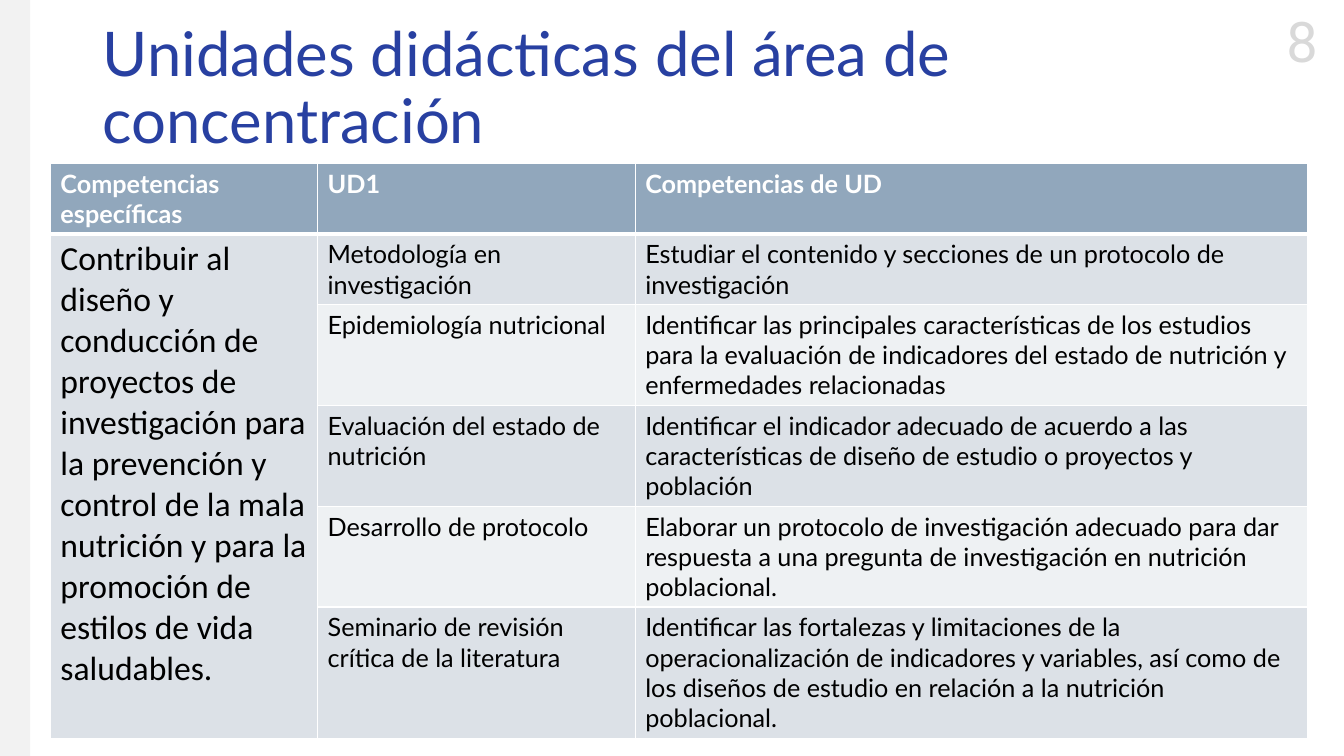
from dataclasses import dataclass

from lxml import etree
from pptx import Presentation
from pptx.dml.color import RGBColor
from pptx.enum.shapes import MSO_SHAPE
from pptx.enum.text import MSO_ANCHOR, PP_ALIGN
from pptx.oxml.ns import qn
from pptx.util import Inches, Pt

RECT = MSO_SHAPE.RECTANGLE
TOP, MIDDLE = MSO_ANCHOR.TOP, MSO_ANCHOR.MIDDLE
LEFT, CENTER = PP_ALIGN.LEFT, PP_ALIGN.CENTER


@dataclass(frozen=True)
class Theme:
    title: str = "2840A1"
    number: str = "D9D9D9"
    strip: str = "F2F2F2"
    header: str = "91A7BC"
    bands: tuple = ("DCE1E7", "EEF1F3")
    white: str = "FFFFFF"
    text: str = "000000"
    title_size: int = 44
    number_size: int = 40
    goal_size: int = 24
    cell_size: int = 18


T = Theme()

TITLE = "Unidades didácticas del área de concentración"
HEADER = ["Competencias específicas", "UD1", "Competencias de UD"]
GOAL = ("Contribuir al diseño y conducción de proyectos de investigación para "
        "la prevención y control de la mala nutrición y para la promoción de "
        "estilos de vida saludables.")
UNITS = [
    ("Metodología en investigación",
     "Estudiar el contenido y secciones de un protocolo de investigación"),
    ("Epidemiología nutricional",
     "Identificar las principales características de los estudios para la "
     "evaluación de indicadores del estado de nutrición y enfermedades "
     "relacionadas"),
    ("Evaluación del estado de nutrición",
     "Identificar el indicador adecuado de acuerdo a las características de "
     "diseño de estudio o proyectos y población"),
    ("Desarrollo de protocolo",
     "Elaborar un protocolo de investigación adecuado para dar respuesta a "
     "una pregunta de investigación en nutrición poblacional."),
    ("Seminario de revisión crítica de la literatura",
     "Identificar las fortalezas y limitaciones de la operacionalización de "
     "indicadores y variables, así como de los diseños de estudio en relación "
     "a la nutrición poblacional."),
]
COL_WIDTHS = [2.65, 3.15, 6.67]
ROW_HEIGHTS = [0.7, 0.7, 1, 1, 1, 1.3]


def rgb(color):
    return RGBColor.from_string(color)


def write(tf, text, color, align=LEFT, spacing=None, **font):
    p = tf.paragraphs[0]
    p.alignment = align
    p.line_spacing = spacing
    r = p.add_run()
    r.text = text
    r.font.color.rgb = rgb(color)
    for name, value in font.items():
        setattr(r.font, name, value)


def add_text(s, box, text, color, wrap=True, anchor=TOP, **style):
    tf = s.shapes.add_textbox(*map(Inches, box)).text_frame
    tf.word_wrap = wrap
    tf.vertical_anchor = anchor
    write(tf, text, color, **style)


def set_borders(cell, bottom):
    tcPr = cell._tc.get_or_add_tcPr()
    widths = {"a:lnL": 1, "a:lnR": 1, "a:lnT": 1, "a:lnB": bottom}
    for i, (tag, width) in enumerate(widths.items()):
        ln = etree.Element(qn(tag), w=str(Pt(width)))
        fill = etree.SubElement(ln, qn("a:solidFill"))
        etree.SubElement(fill, qn("a:srgbClr"), val=T.white)
        tcPr.insert(i, ln)


def add_frame(s, box):
    """Side strip on the left and slide number in the top right corner."""
    x, y, w, h = box
    strip = s.shapes.add_shape(RECT, *map(Inches, (x, y, 0.3, h)))
    strip.shadow.inherit = False
    strip.fill.solid()
    strip.fill.fore_color.rgb = rgb(T.strip)
    strip.line.fill.background()
    add_text(s, (x + w - 0.79, y + 0.02, 0.75, 0.77), "8", T.number,
             wrap=False, align=CENTER, size=Pt(T.number_size), name="Roboto")


def add_title(s, box):
    add_text(s, box, TITLE, T.title, anchor=MIDDLE, spacing=0.9,
             size=Pt(T.title_size), name="Lato")


def add_units_table(s, box):
    rows = [HEADER] + [("", *unit) for unit in UNITS]
    table = s.shapes.add_table(len(rows), len(HEADER),
                               *map(Inches, box)).table
    for col, width in zip(table.columns, COL_WIDTHS):
        col.width = Inches(width)
    for row, height in zip(table.rows, ROW_HEIGHTS):
        row.height = Inches(height)

    # Header and banded unit rows
    for i, texts in enumerate(rows):
        head = i == 0
        for j, text in enumerate(texts):
            cell = table.cell(i, j)
            set_borders(cell, 3 if head else 1)
            cell.fill.solid()
            cell.fill.fore_color.rgb = rgb(
                T.header if head else T.bands[(i - 1) % 2])
            if text:
                write(cell.text_frame, text, T.white if head else T.text,
                      size=Pt(T.cell_size), name="Lato", bold=head)

    # Specific competence, spanning all units
    goal = table.cell(1, 0)
    goal.merge(table.cell(len(UNITS), 0))
    write(goal.text_frame, GOAL, T.text, size=Pt(T.goal_size),
          name="Calibri", bold=False)


def main():
    prs = Presentation()
    prs.slide_width, prs.slide_height = Inches(13.33), Inches(7.5)
    s = prs.slides.add_slide(prs.slide_layouts[6])
    add_frame(s, (0, 0, 13.33, 7.5))
    add_title(s, (0.92, 0.17, 11.5, 1.45))
    add_units_table(s, (0.5, 1.62, sum(COL_WIDTHS), sum(ROW_HEIGHTS)))
    prs.save("out.pptx")


if __name__ == "__main__":
    main()
